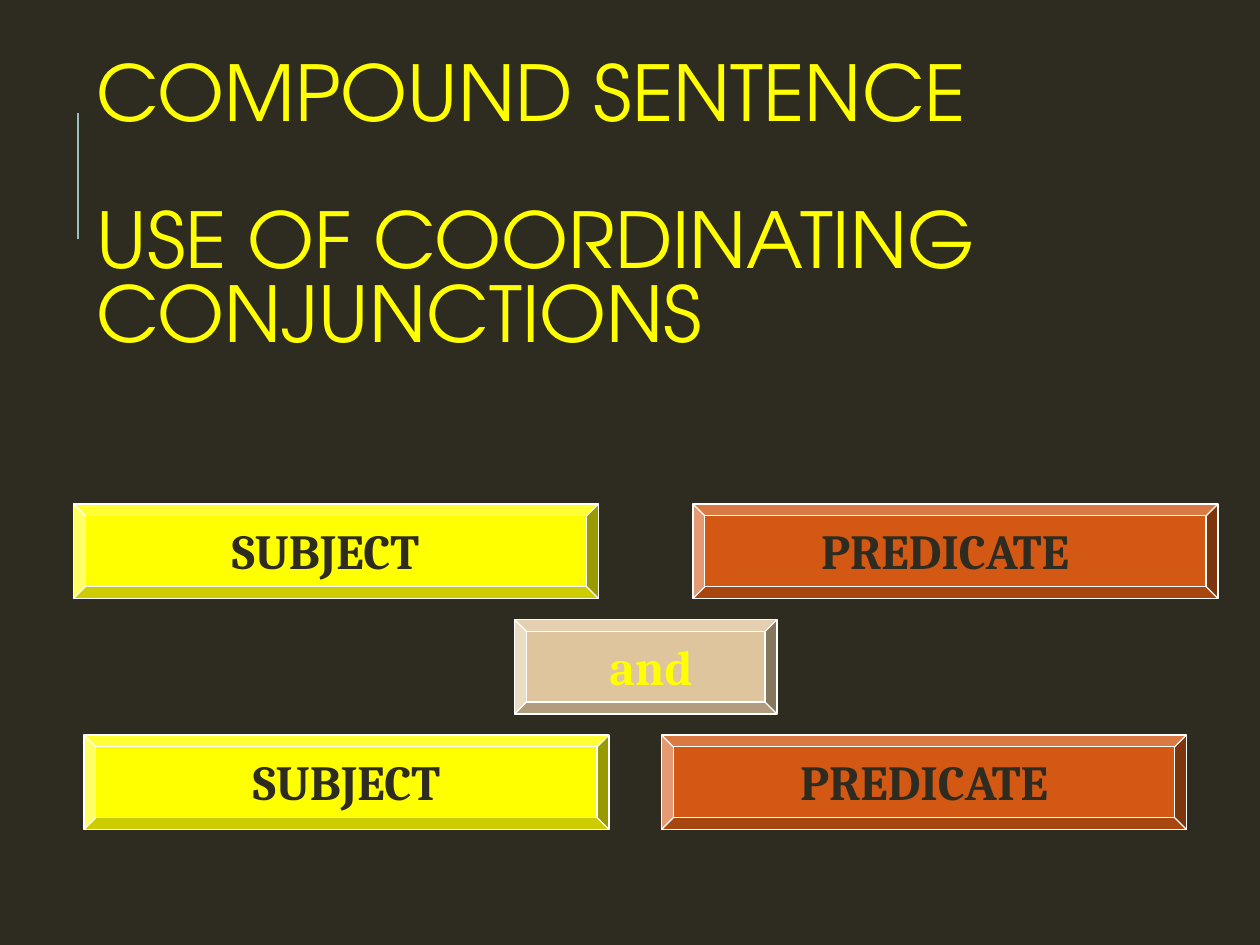
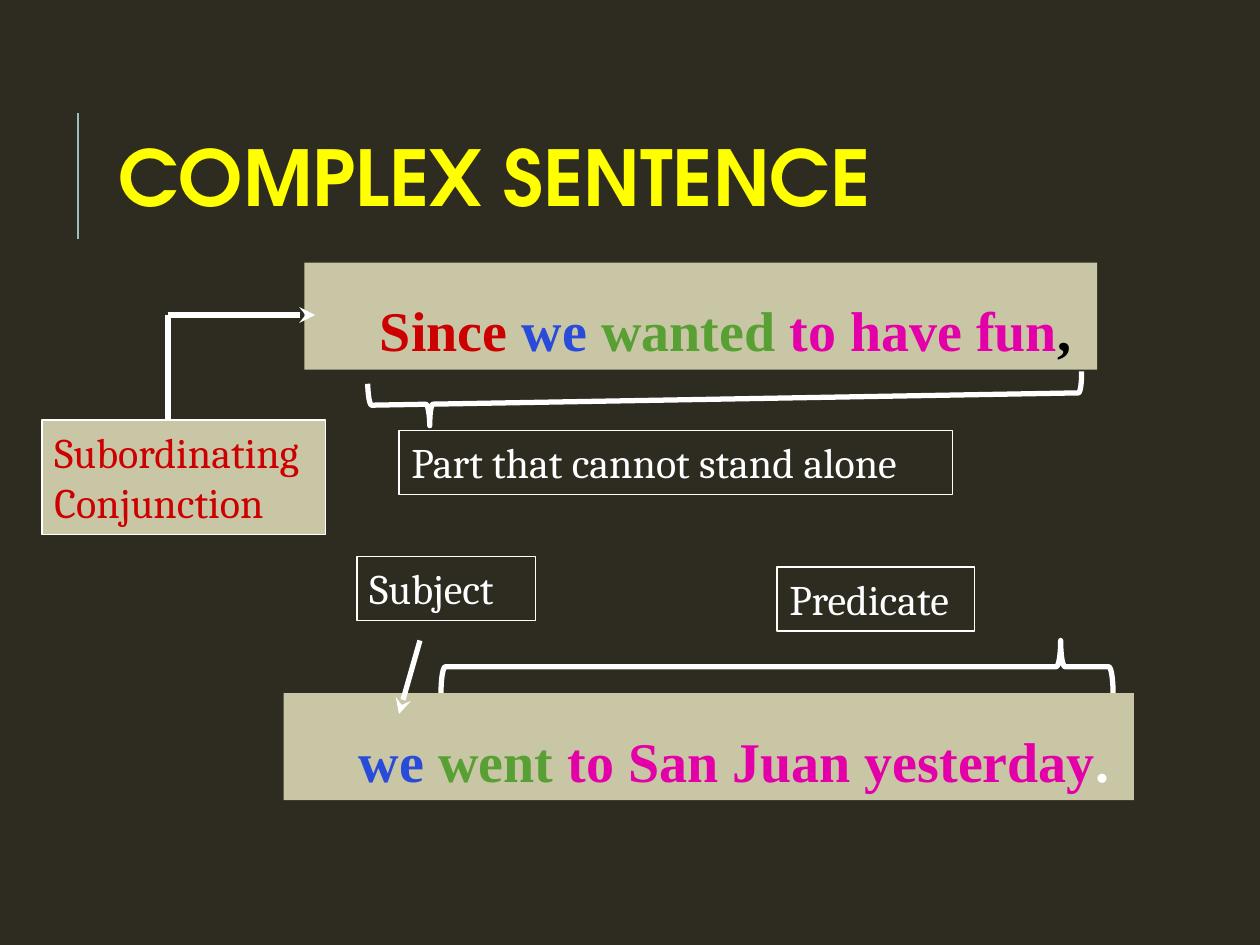
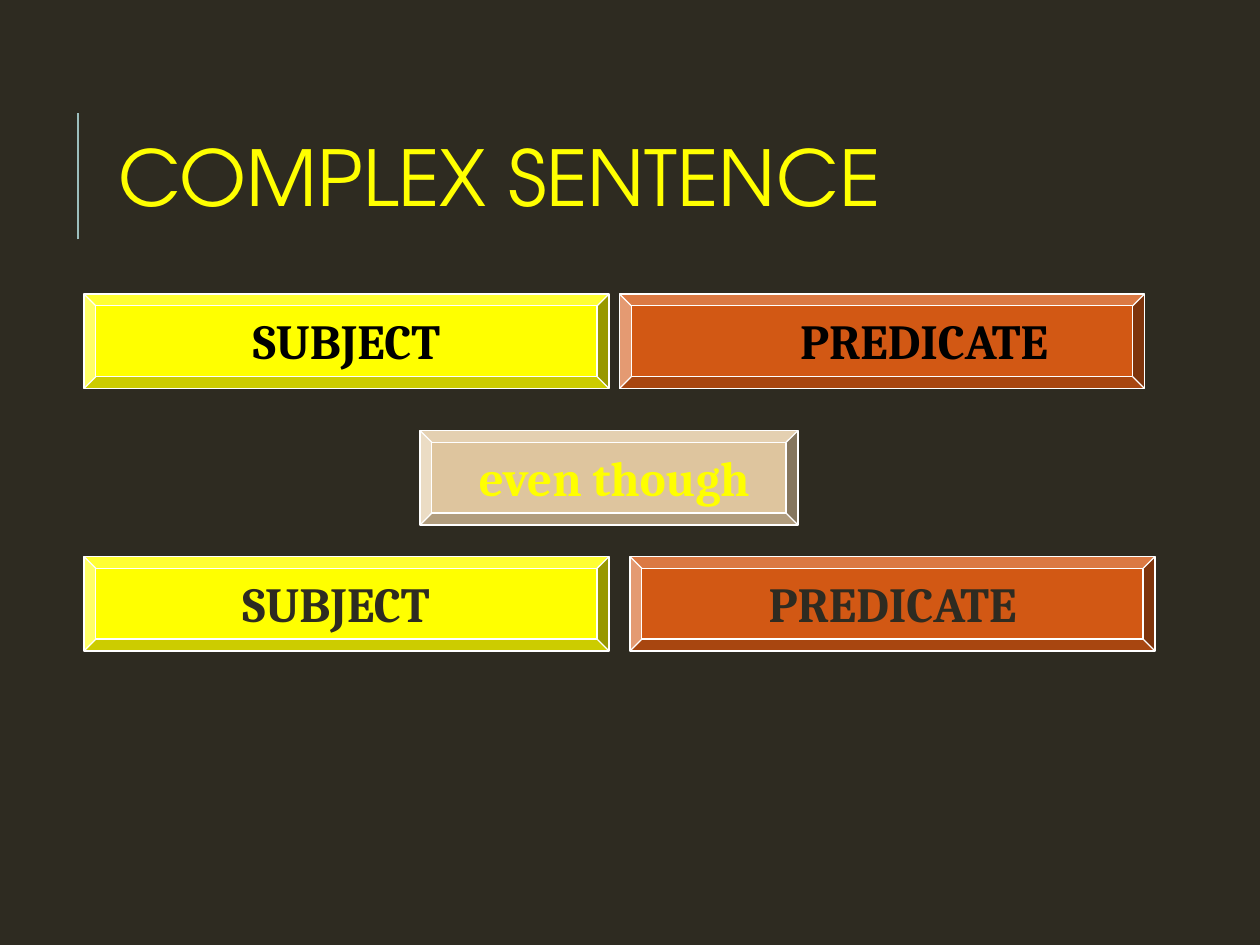
"""Build three slides on compound and complex sentences."""
from dataclasses import dataclass

from lxml.etree import SubElement
from pptx import Presentation
from pptx.dml.color import RGBColor
from pptx.enum.shapes import MSO_CONNECTOR as Connector, MSO_SHAPE as Preset
from pptx.enum.text import MSO_ANCHOR as Anchor, MSO_AUTO_SIZE as AutoSize, PP_ALIGN as Align
from pptx.oxml.ns import qn
from pptx.util import Inches, Pt

COLUMNS, ROWS = 120, 90
WIDTH, HEIGHT = Inches(10), Inches(7.5)
TITLE_FONT, LABEL_FONT, SENTENCE_FONT = "TeX Gyre Adventor", "Cambria", "Times New Roman"
DARK, WHITE, BLACK, YELLOW = "2E2B21", "FFFFFF", "000000", "FFFF00"
ORANGE, TAN, KHAKI, TEAL = "D25814", "DEC59E", "C9C6A5", "9CBEBD"
RED, BLUE, GREEN, PINK = "CC0000", "294BD9", "58A034", "E400A8"


@dataclass(frozen=True)
class Area:
    """A rectangle in grid columns and rows."""
    left: float
    top: float
    width: float
    height: float

    def emu(self) -> tuple[int, int, int, int]:
        """Return left, top, width and height in EMU."""
        return across(self.left), down(self.top), across(self.width), down(self.height)


@dataclass(frozen=True)
class Style:
    """The look of a span of text."""
    font: str
    size: float
    bold: bool = False


@dataclass(frozen=True)
class Block:
    """A bevelled sentence part and its caption."""
    text: str
    left: float
    top: float
    caption_left: float
    fill: str
    color: str = DARK
    width: float = 50
    caption_width: float = 44


@dataclass(frozen=True)
class Label:
    """An outlined box holding lines of text."""
    lines: tuple[str, ...]
    area: Area
    fill: str | None = DARK
    color: str = WHITE


@dataclass(frozen=True)
class Sentence:
    """A filled band holding coloured spans."""
    area: Area
    spans: tuple[tuple[str, str], ...]


@dataclass(frozen=True)
class Brace:
    """A turned brace, its frame given before rotation."""
    area: Area
    rotation: float
    curve: float
    point: float


@dataclass(frozen=True)
class Stroke:
    """A straight line, with or without an arrowhead."""
    start: tuple[float, float]
    end: tuple[float, float]
    arrow: bool = False
    color: str = WHITE
    weight: float = 3


TITLE_AREA = Area(10.1, 7.7, 95.6, 19.7)
TITLE_STYLE, BOLD_TITLE = Style(TITLE_FONT, 44), Style(TITLE_FONT, 44, True)
CAPTION_STYLE, LABEL_STYLE = Style(LABEL_FONT, 28, True), Style(LABEL_FONT, 24)
SENTENCE_STYLE = Style(SENTENCE_FONT, 32, True)
SIDE_RULE = Stroke((7.45, 22.8), (7.45, 10.8), color=TEAL, weight=1.5)

COMPOUND_BLOCKS = (
    Block("and", 49, 59, 53, TAN, YELLOW, 25, 18),
    Block("SUBJECT", 7, 48, 9, YELLOW),
    Block("PREDICATE", 66, 48, 68, ORANGE),
    Block("SUBJECT", 8, 70, 11, YELLOW),
    Block("PREDICATE", 63, 70, 66, ORANGE),
)
COMPLEX_BLOCKS = (
    Block("even though", 40, 41, 43, TAN, YELLOW, 36, 31),
    Block("SUBJECT", 8, 28, 11, YELLOW, BLACK),
    Block("PREDICATE", 59, 28, 66, ORANGE, BLACK),
    Block("SUBJECT", 8, 53, 10, YELLOW),
    Block("PREDICATE", 60, 53, 63, ORANGE),
)
SENTENCES = (
    Sentence(Area(29, 25, 75.5, 10.2),
             (("Since ", RED), ("we ", BLUE), ("wanted ", GREEN), ("to have fun", PINK), (",", BLACK))),
    Sentence(Area(27, 66, 81, 10.2),
             (("we ", BLUE), ("went ", GREEN), ("to San Juan yesterday", PINK), (".", WHITE))),
)
LABELS = (
    Label(("Predicate",), Area(74, 54, 18.85, 6.1)),
    Label(("Subject",), Area(34, 53, 17, 6.1)),
    Label(("Subordinating", "Conjunction"), Area(4, 40, 27, 10.9), KHAKI, RED),
    Label(("Part that cannot stand alone",), Area(38, 41, 52.7, 6.1), None),
)
BRACES = (
    Brace(Area(71.5, 31.5, 5, 64), 90, 0.083, 0.078),
    Brace(Area(67, 4, 4.1, 68), 269, 0.083, 0.086),
)
STROKES = (
    Stroke((40, 61), (38, 68), True),
    Stroke((16, 30), (16, 40)),
    Stroke((16, 30), (30, 30), True),
)


def across(columns: float) -> int:
    """Turn grid columns into EMU."""
    return round(WIDTH * columns / COLUMNS)


def down(rows: float) -> int:
    """Turn grid rows into EMU."""
    return round(HEIGHT * rows / ROWS)


def paint(color_format, color: str) -> None:
    """Set a colour from a hex string."""
    color_format.rgb = RGBColor.from_string(color)


def paint_fill(fill, color: str | None) -> None:
    """Fill with a solid colour, or with nothing."""
    if color is None:
        fill.background()
    else:
        fill.solid()
        paint(fill.fore_color, color)


def add_span(para, text: str, style: Style, color: str) -> None:
    """Add one run of styled text."""
    span = para.add_run()
    span.text = text
    span.font.name, span.font.size, span.font.bold = style.font, Pt(style.size), style.bold
    paint(span.font.color, color)


def write_lines(frame, lines: tuple[str, ...], style: Style, color: str, align=Align.LEFT) -> None:
    """Write each line as a paragraph."""
    frame.word_wrap = True
    for index, line in enumerate(lines):
        para = frame.add_paragraph() if index else frame.paragraphs[0]
        para.alignment = align
        add_span(para, line, style, color)


def add_preset(page, preset, area: Area, fill: str | None, line: str | None = WHITE, weight: float = 0.75):
    """Add a flat preset shape with its text at the top."""
    shape = page.shapes.add_shape(preset, *area.emu())
    shape.shadow.inherit = False
    paint_fill(shape.fill, fill)
    paint_fill(shape.line.fill, line)
    shape.line.width = Pt(weight)
    shape.text_frame.vertical_anchor = Anchor.TOP
    return shape


def add_stroke(page, stroke: Stroke) -> None:
    """Draw a straight line."""
    (left, top), (right, bottom) = stroke.start, stroke.end
    line = page.shapes.add_connector(
        Connector.STRAIGHT, across(left), down(top), across(right), down(bottom))
    paint(line.line.color, stroke.color)
    line.line.width = Pt(stroke.weight)
    if stroke.arrow:
        SubElement(line.line._get_or_add_ln(), qn("a:tailEnd"), type="stealth")
    SubElement(line._element.spPr, qn("a:effectLst"))


def add_block(page, block: Block) -> None:
    """Draw a bevelled block with its caption."""
    bevel = add_preset(page, Preset.BEVEL, Area(block.left, block.top, block.width, 9), block.fill)
    bevel.adjustments[0] = 0.125
    caption = Area(block.caption_left, block.top + 1, block.caption_width, 6.85)
    box = page.shapes.add_textbox(*caption.emu())
    write_lines(box.text_frame, (block.text,), CAPTION_STYLE, block.color, Align.CENTER)


def add_sentence(page, sentence: Sentence) -> None:
    """Draw a sentence band with its coloured spans."""
    box = add_preset(page, Preset.RECTANGLE, sentence.area, KHAKI, None)
    para = box.text_frame.paragraphs[0]
    para.alignment, para.line_spacing, para.level = Align.LEFT, 1.4, 1
    properties = para._p.get_or_add_pPr()
    properties.set("marL", str(Inches(0.5)))
    properties.set("indent", "0")
    for text, color in sentence.spans:
        add_span(para, text, SENTENCE_STYLE, color)


def add_label(page, label: Label) -> None:
    """Draw an outlined label."""
    box = add_preset(page, Preset.RECTANGLE, label.area, label.fill)
    write_lines(box.text_frame, label.lines, LABEL_STYLE, label.color)


def add_brace(page, brace: Brace) -> None:
    """Draw a turned brace."""
    shape = add_preset(page, Preset.LEFT_BRACE, brace.area, None, weight=3)
    shape.rotation = brace.rotation
    shape.adjustments[0], shape.adjustments[1] = brace.curve, brace.point


def add_page(deck, lines: tuple[str, ...], area: Area = TITLE_AREA, style: Style = TITLE_STYLE):
    """Add a slide with the side rule and a title."""
    page = deck.slides.add_slide(deck.slide_layouts[5])
    add_stroke(page, SIDE_RULE)
    title = page.shapes.title
    title.left, title.top, title.width, title.height = area.emu()
    frame = title.text_frame
    frame.auto_size, frame.vertical_anchor = AutoSize.NONE, Anchor.MIDDLE
    write_lines(frame, lines, style, YELLOW)
    for index, para in enumerate(frame.paragraphs):
        para.line_spacing = 0.8
        para.space_before = Pt(42 if index else 0)
    return page


def main() -> None:
    """Build and save the deck."""
    deck = Presentation()
    deck.slide_width, deck.slide_height = WIDTH, HEIGHT
    paint_fill(deck.slide_master.background.fill, DARK)

    compound = add_page(deck, ("COMPOUND SENTENCE", "USE OF COORDINATING CONJUNCTIONS"), Area(8, 3, 108, 34))
    for block in COMPOUND_BLOCKS:
        add_block(compound, block)

    example = add_page(deck, ("COMPLEX SENTENCE",), style=BOLD_TITLE)
    for draw, items in ((add_sentence, SENTENCES), (add_label, LABELS),
                        (add_brace, BRACES), (add_stroke, STROKES)):
        for item in items:
            draw(example, item)

    pattern = add_page(deck, ("COMPLEX SENTENCE",))
    for block in COMPLEX_BLOCKS:
        add_block(pattern, block)

    deck.save("out.pptx")


if __name__ == "__main__":
    main()
